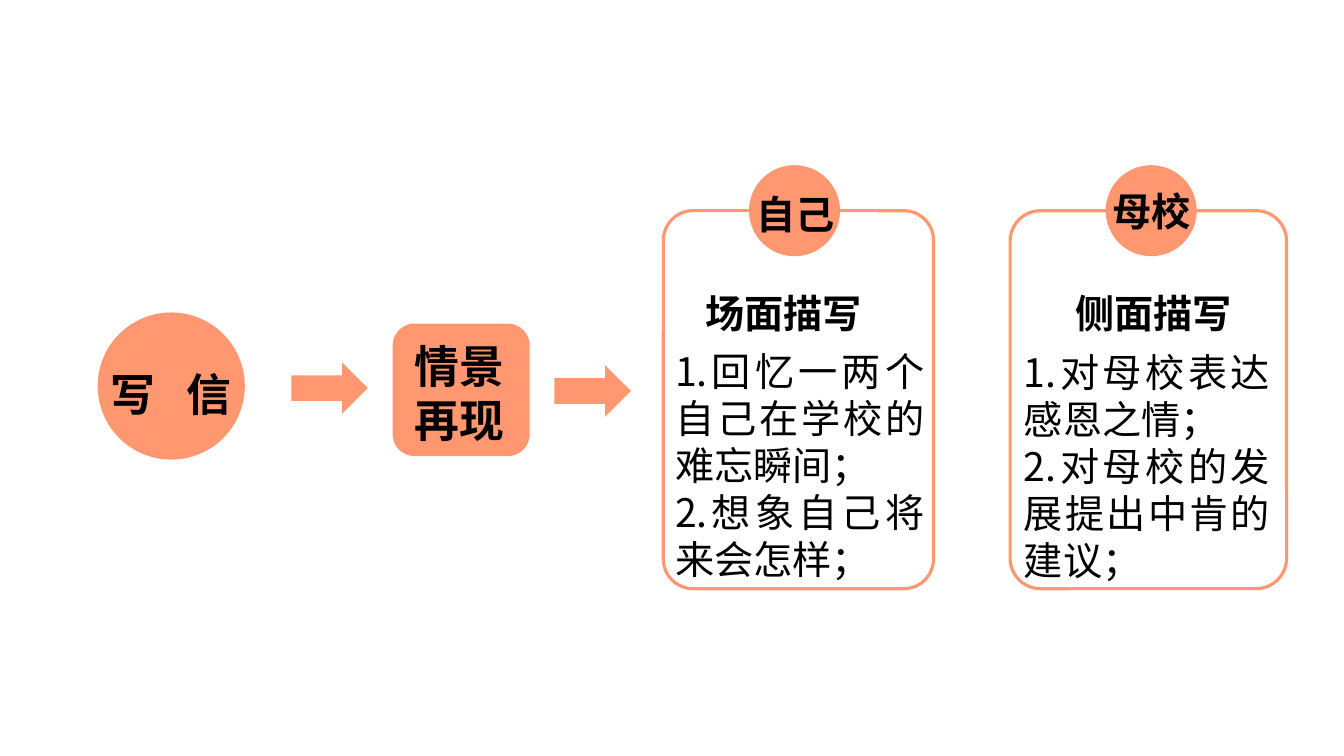
from dataclasses import dataclass

from lxml import etree
from pptx import Presentation, util as u
from pptx.dml import color
from pptx.enum import shapes, text
from pptx.oxml import ns

CORAL, BLACK = "FF9770", "000000"
CJK = "Noto Sans CJK SC"
LEFT, CENTER, JUSTIFY = text.PP_ALIGN.LEFT, text.PP_ALIGN.CENTER, text.PP_ALIGN.JUSTIFY
Box = tuple[float, float, float, float]


@dataclass
class Step:
    kind: shapes.MSO_SHAPE
    box: Box


@dataclass
class Label:
    box: Box
    lines: list[str]
    align: text.PP_ALIGN = CENTER
    size: int = 28
    font: str = CJK
    bold: bool = True


@dataclass
class Card:
    frame: Box
    badge_left: float
    name: Label
    heading: Label
    points: Label


CARDS = [
    Card((473.8, 150.5, 193, 270), 535,
         Label((533.5, 132.5, 71.3, 41), ["自己"], LEFT),
         Label((489.6, 203, 140.4, 41), ["场面描写"]),
         Label((475.2, 244.8, 192.2, 175),
               ["1.回忆一两个自己在学校的难忘瞬间；", "2.想象自己将来会怎样；"],
               JUSTIFY, bold=False)),
    Card((721.5, 150.5, 197.5, 270), 789.8,
         Label((787.7, 130.3, 71.3, 41), ["母校"], LEFT),
         Label((753.8, 203, 140.4, 41), ["侧面描写"]),
         Label((724.3, 245.5, 190.1, 175),
               ["1.对母校表达感恩之情；", "2.对母校的发展提出中肯的建议；"],
               JUSTIFY, bold=False)),
]
STEPS = [
    Step(shapes.MSO_SHAPE.OVAL, (69.8, 223.2, 105.1, 105.1)),
    Step(shapes.MSO_SHAPE.RIGHT_ARROW, (208.1, 258.9, 54.7, 36.7)),
    Step(shapes.MSO_SHAPE.RIGHT_ARROW, (396, 260.9, 54.7, 36.7)),
    Step(shapes.MSO_SHAPE.ROUNDED_RECTANGLE, (280.5, 231.1, 97.9, 94.7)),
]
LETTER = Label((67, 258.5, 110.2, 46), ["写 信"], size=32, font="Calibri")
SCENE = Label((272.9, 238.3, 110.2, 84.2), ["情景", "再现"], size=32, font="Calibri")


def rgb(value: str) -> color.RGBColor:
    return color.RGBColor.from_string(value)


def points(box: Box) -> list[u.Pt]:
    return [u.Pt(length) for length in box]


def add_solid(slide, step: Step):
    solid = slide.shapes.add_shape(step.kind, *points(step.box))
    solid.shadow.inherit = False
    solid.fill.solid()
    solid.fill.fore_color.rgb = rgb(CORAL)
    solid.line.fill.background()


def add_frame(slide, box: Box):
    frame = slide.shapes.add_shape(shapes.MSO_SHAPE.ROUNDED_RECTANGLE, *points(box))
    frame.adjustments[0] = 0.11
    frame.shadow.inherit = False
    frame.fill.background()
    frame.line.color.rgb = rgb(CORAL)
    frame.line.width = u.Pt(2.25)


def add_label(slide, label: Label):
    caption = slide.shapes.add_textbox(*points(label.box)).text_frame
    caption.word_wrap = True
    for number, line in enumerate(label.lines):
        paragraph = caption.add_paragraph() if number else caption.paragraphs[0]
        paragraph.alignment = label.align
        paragraph.line_spacing = u.Pt(label.size * 1.2)
        font = paragraph.font
        font.size, font.bold, font.name = u.Pt(label.size), label.bold, label.font
        font.color.rgb = rgb(BLACK)
        defaults = paragraph._p.pPr.find(ns.qn("a:defRPr"))
        etree.SubElement(defaults, ns.qn("a:ea"), typeface=CJK)
        spaced, gap, rest = line.partition(" ")
        first = paragraph.add_run()
        first.text = spaced + gap
        if gap:  # letter spacing widens the gap between the two characters
            first._r.get_or_add_rPr().set("spc", "720")
            paragraph.add_run().text = rest


def add_card(slide, card: Card):
    add_frame(slide, card.frame)
    add_solid(slide, Step(shapes.MSO_SHAPE.OVAL, (card.badge_left, 118, 65, 65)))
    for label in (card.name, card.heading, card.points):
        add_label(slide, label)


def main():
    deck = Presentation()
    deck.slide_width, deck.slide_height = u.Pt(960), u.Pt(540)
    slide = deck.slides.add_slide(deck.slide_layouts[6])
    for card in CARDS:
        add_card(slide, card)
    for step in STEPS:
        add_solid(slide, step)
    for label in (LETTER, SCENE):
        add_label(slide, label)
    deck.save("out.pptx")


if __name__ == "__main__":
    main()
